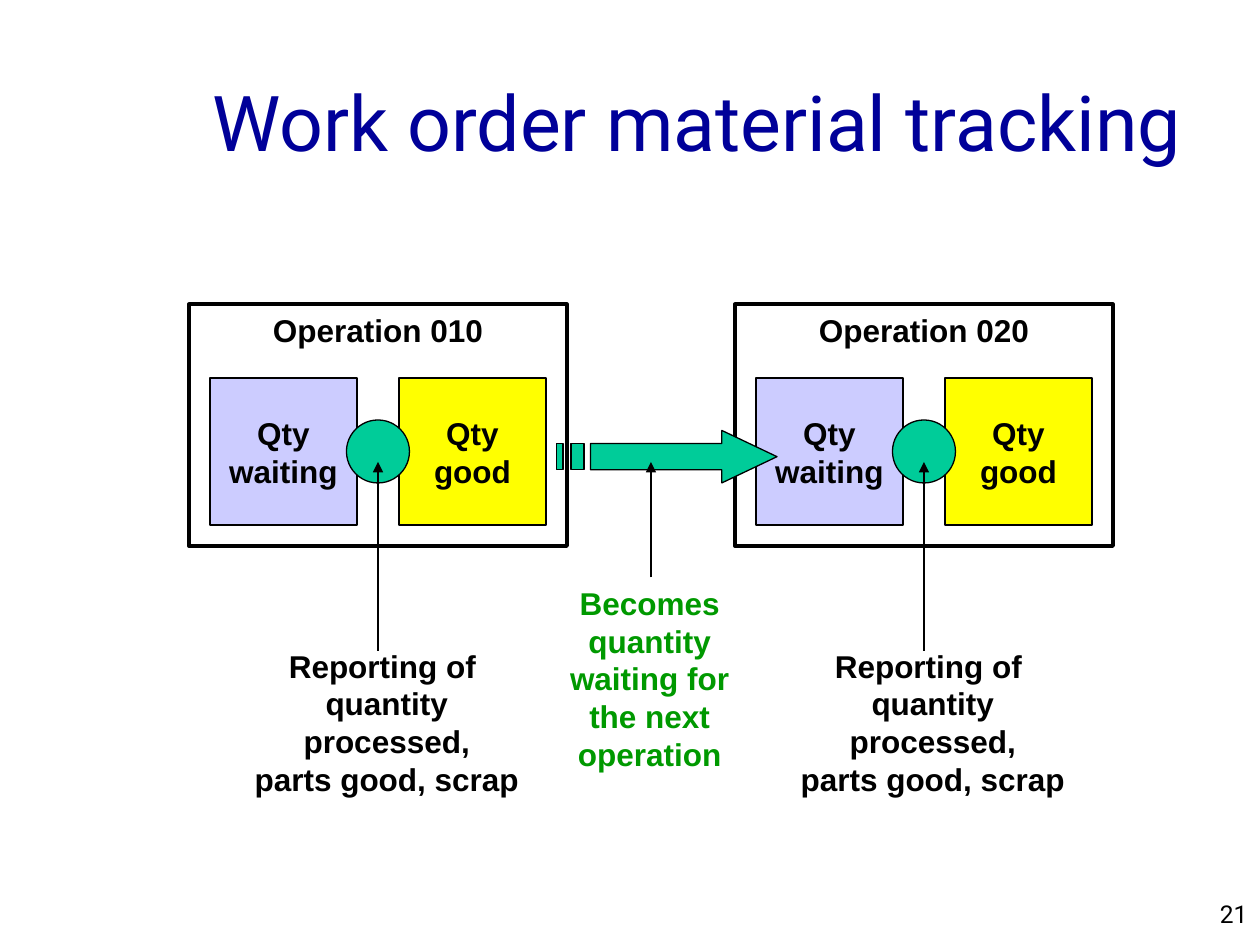
from pptx import Presentation
from pptx.dml.color import RGBColor
from pptx.enum.shapes import MSO_CONNECTOR, MSO_SHAPE
from pptx.enum.text import MSO_ANCHOR, MSO_AUTO_SIZE, PP_ALIGN
from pptx.oxml.ns import qn
from pptx.util import Pt
from lxml.etree import SubElement

BLACK = "000000"
LILAC = "CCCCFF"
YELLOW = "FFFF00"
TEAL = "00CC99"
GREEN = "009900"
NAVY = "000099"
OPERATION_STEP = 312
OPERATIONS = ["Operation 010", "Operation 020"]
REPORTING_LINES = ["Reporting of ", "quantity processed,", "parts good, scrap"]


def color(value):
    return RGBColor.from_string(value)


def add_span(para, text, size=18, font="Arial", text_color=BLACK, bold=True):
    span = para.add_run()
    span.text = text
    span.font.size = Pt(size)
    span.font.name = font
    span.font.bold = bold
    span.font.color.rgb = color(text_color)


def format_shape(shape, fill, line_width=0.75):
    shape.shadow.inherit = False
    if fill:
        shape.fill.solid()
        shape.fill.fore_color.rgb = color(fill)
    else:
        shape.fill.background()
    shape.line.color.rgb = color(BLACK)
    shape.line.width = Pt(line_width)


def add_box(page, left, top, width, height, lines, fill=None,
            line_width=0.75, anchor=MSO_ANCHOR.MIDDLE):
    box = page.shapes.add_shape(
        MSO_SHAPE.RECTANGLE, Pt(left), Pt(top), Pt(width), Pt(height))
    format_shape(box, fill, line_width)
    frame = box.text_frame
    frame.word_wrap = False
    frame.vertical_anchor = anchor
    for index, line in enumerate(lines):
        para = frame.add_paragraph() if index else frame.paragraphs[0]
        para.alignment = PP_ALIGN.CENTER
        add_span(para, line)


def add_circle(page, left, top, size):
    circle = page.shapes.add_shape(
        MSO_SHAPE.OVAL, Pt(left), Pt(top), Pt(size), Pt(size))
    format_shape(circle, TEAL)


def add_striped_arrow(page):
    top, shaft_top, middle, shaft_bottom, bottom = 246, 253.5, 261, 268.5, 276
    outlines = [
        [(412.5, top), (412.5, shaft_top), (337.5, shaft_top),
         (337.5, shaft_bottom), (412.5, shaft_bottom), (412.5, bottom),
         (444, middle)],
    ]
    for left, right in [(326.25, 333.75), (318, 321.75)]:
        outlines.append([(left, shaft_top), (left, shaft_bottom),
                         (right, shaft_bottom), (right, shaft_top)])
    builder = None
    for outline in outlines:
        start, *rest = [(Pt(x), Pt(y)) for x, y in outline]
        if builder is None:
            builder = page.shapes.build_freeform(*start)
        else:
            builder.move_to(*start)
        builder.add_line_segments(rest, close=True)
    format_shape(builder.convert_to_shape(), TEAL)


def add_pointer(page, x, bottom, top):
    pointer = page.shapes.add_connector(
        MSO_CONNECTOR.STRAIGHT, Pt(x), Pt(bottom), Pt(x), Pt(top))
    pointer.line.color.rgb = color(BLACK)
    pointer.line.width = Pt(0.75)
    SubElement(pointer.line._get_or_add_ln(), qn("a:tailEnd"), type="triangle")
    SubElement(pointer._element.spPr, qn("a:effectLst"))


def add_label(page, left, top, width, height, lines, wrap=True,
              alignment=PP_ALIGN.CENTER, **style):
    label = page.shapes.add_textbox(Pt(left), Pt(top), Pt(width), Pt(height))
    frame = label.text_frame
    frame.word_wrap = wrap
    if not wrap:
        frame.auto_size = MSO_AUTO_SIZE.SHAPE_TO_FIT_TEXT
    para = frame.paragraphs[0]
    para.alignment = alignment
    for index, line in enumerate(lines):
        if index:
            para.add_line_break()
        add_span(para, line, **style)


def set_title(page, text):
    title = page.shapes.title
    title.left, title.top, title.width, title.height = Pt(0), Pt(24), Pt(683), Pt(90)
    title.text_frame.vertical_anchor = MSO_ANCHOR.MIDDLE
    para = title.text_frame.paragraphs[0]
    para.alignment = PP_ALIGN.RIGHT
    add_span(para, text, size=44, font="Roboto", text_color=NAVY, bold=False)


def main():
    deck = Presentation()
    deck.slide_width, deck.slide_height = Pt(720), Pt(540)
    page = deck.slides.add_slide(deck.slide_layouts[5])
    offsets = [index * OPERATION_STEP for index in range(len(OPERATIONS))]

    add_label(page, 570, 510, 150, 18, ["21"], alignment=PP_ALIGN.RIGHT,
              size=14, font="Roboto", bold=False)
    set_title(page, "Work order material tracking")
    for offset in offsets:
        add_box(page, 120 + offset, 216, 84, 84, ["Qty", "waiting"], LILAC)
        add_box(page, 228 + offset, 216, 84, 84, ["Qty", "good"], YELLOW)
    for offset, name in zip(offsets, OPERATIONS):
        add_box(page, 108 + offset, 174, 216, 138, [name],
                line_width=2.25, anchor=MSO_ANCHOR.TOP)
    add_striped_arrow(page)
    for offset in offsets:
        add_circle(page, 198 + offset, 240, 36)
    for offset in offsets:
        add_pointer(page, 216 + offset, 372, 264)
        add_label(page, 129 + offset, 366, 184, 72, REPORTING_LINES, wrap=False)
    add_pointer(page, 372, 330, 264)
    add_label(page, 309, 330, 124.5, 29,
              ["Becomes quantity waiting for the next operation"],
              text_color=GREEN)
    deck.save("out.pptx")


if __name__ == "__main__":
    main()
